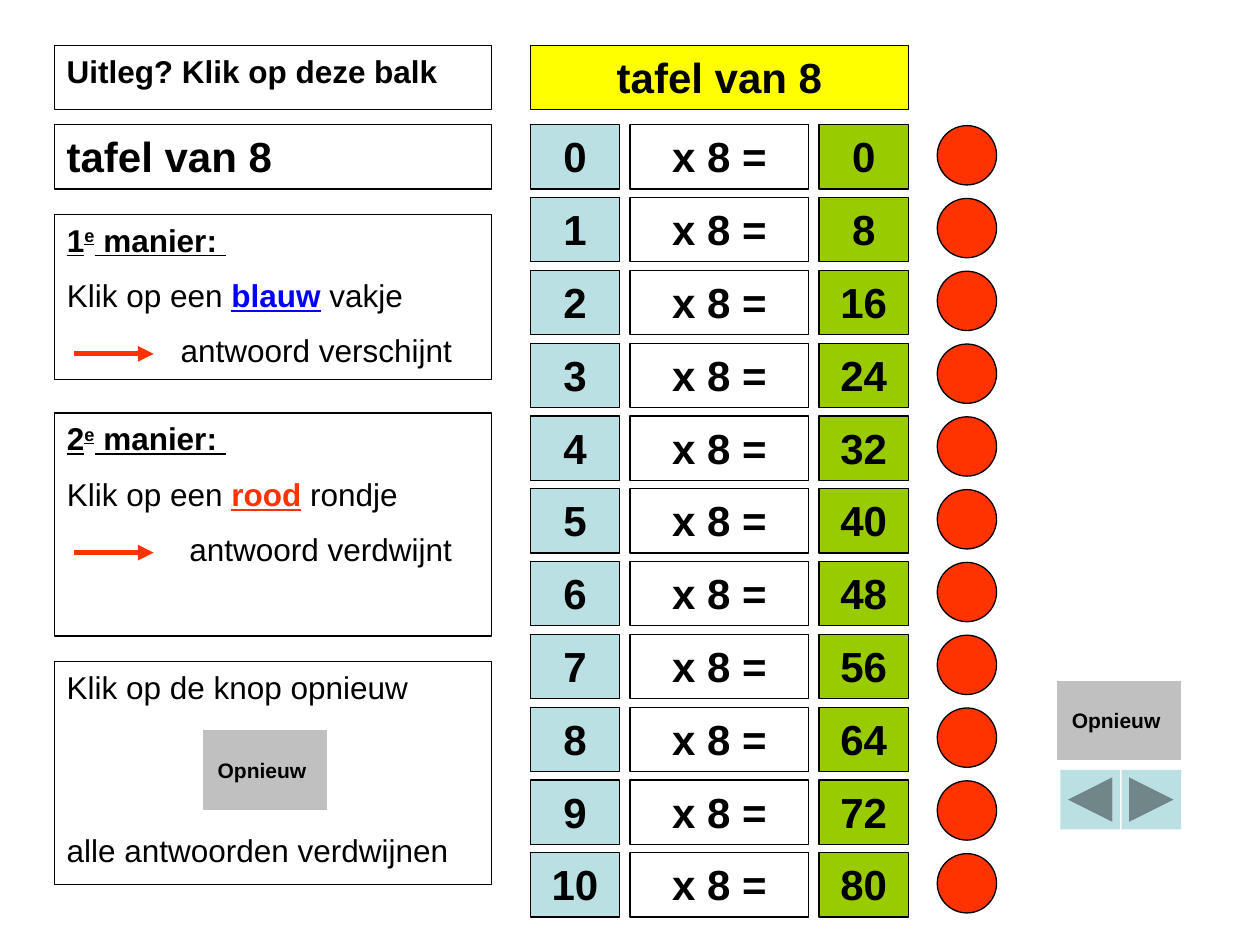
from dataclasses import dataclass

from lxml import etree
from pptx import Presentation
from pptx.dml.color import RGBColor
from pptx.enum import shapes, text
from pptx.oxml.ns import qn
from pptx.util import Pt

KIND = shapes.MSO_SHAPE
ALIGN = text.PP_ALIGN


@dataclass(frozen=True)
class Theme:
    font: str = "Arial"
    black: str = "000000"
    white: str = "FFFFFF"
    yellow: str = "FFFF00"
    pale_blue: str = "BBE0E3"
    green: str = "99CC00"
    red: str = "FF3300"
    link_blue: str = "0000FF"
    grey: str = "C0C0C0"
    large: int = 24
    normal: int = 18
    small: int = 12


THEME = Theme()
TABLE_OF = 8
ROW_TOP, ROW_PITCH, ROW_HEIGHT = 71.3, 41.6, 36.7
HEADER_TOP = 25.9
QUESTION_LEFT, SUM_LEFT, ANSWER_LEFT, DOT_LEFT = 303, 360, 468, 535.6
CELL_WIDTH, SUM_WIDTH, DOT_SIZE = 51.2, 102.2, 33.9
PANEL_LEFT, PANEL_WIDTH = 31, 249.8


def place(shape, left, top, width, height):
    shape.left, shape.top = Pt(left), Pt(top)
    shape.width, shape.height = Pt(width), Pt(height)


def paint(shape, fill=None, outline=True):
    if fill:
        shape.fill.solid()
        shape.fill.fore_color.rgb = RGBColor.from_string(fill)
    else:
        shape.fill.background()
    if outline:
        shape.line.color.rgb = RGBColor.from_string(THEME.black)
        shape.line.width = Pt(0.75)
    else:
        shape.line.fill.background()


def write(shape, *paragraphs, size=THEME.normal, bold=False, align=ALIGN.LEFT,
          anchor=text.MSO_ANCHOR.TOP, wrap=True, gaps=(), indents=()):
    """Each paragraph is a string or a list of (text, run format) pairs."""
    frame = shape.text_frame
    frame.auto_size = text.MSO_AUTO_SIZE.NONE
    frame.word_wrap = wrap
    frame.vertical_anchor = anchor
    for index, content in enumerate(paragraphs):
        paragraph = frame.paragraphs[0] if index == 0 else frame.add_paragraph()
        paragraph.alignment = align
        paragraph.space_before = Pt(gaps[index] if gaps else 0)
        properties = paragraph._p.get_or_add_pPr()
        properties.set("marL", str(Pt(indents[index] if indents else 0)))
        properties.set("indent", "0")
        etree.SubElement(properties, qn("a:buNone"))
        for words, style in [(content, {})] if isinstance(content, str) else content:
            run = paragraph.add_run()
            run.text = words
            run.font.name = THEME.font
            run.font.size = Pt(size)
            run.font.bold = style.get("bold", bold)
            run.font.underline = style.get("underline", False)
            run.font.color.rgb = RGBColor.from_string(style.get("color", THEME.black))
            if style.get("raised"):
                run._r.get_or_add_rPr().set("baseline", "30000")


def add_shape(slide, kind, left, top, width, height, fill=None, outline=True):
    shape = slide.shapes.add_shape(kind, Pt(left), Pt(top), Pt(width), Pt(height))
    shape.shadow.inherit = False
    paint(shape, fill, outline)
    return shape


def add_cell(slide, words, left, top, width, fill):
    cell = add_shape(slide, KIND.RECTANGLE, left, top, width, ROW_HEIGHT, fill)
    write(cell, words, size=THEME.large, bold=True, align=ALIGN.CENTER)


def add_bar(slide, words, top, size):
    bar = add_shape(slide, KIND.RECTANGLE, PANEL_LEFT, top, PANEL_WIDTH, ROW_HEIGHT)
    write(bar, words, size=size, bold=True)


def add_arrow(slide, top):
    arrow = slide.shapes.add_connector(shapes.MSO_CONNECTOR.STRAIGHT,
                                       Pt(42.5), Pt(top), Pt(87.8), Pt(top))
    arrow.line.color.rgb = RGBColor.from_string(THEME.red)
    arrow.line.width = Pt(3)
    etree.SubElement(arrow.line._get_or_add_ln(), qn("a:tailEnd"), type="triangle")
    etree.SubElement(arrow._element.spPr, qn("a:effectLst"))


def add_method(slide, panel, number, top, height, colour_word, target, result, indent):
    """Explain one way of using the table, with an arrow to its result."""
    heading = {"bold": True, "underline": True}
    colour_name, colour = colour_word
    place(panel, PANEL_LEFT, top, PANEL_WIDTH, height)
    paint(panel)
    write(panel,
          [(number, heading), ("e", {**heading, "raised": True}), (" manier: ", heading)],
          [("Klik op een ", {}), (colour_name, {**heading, "color": colour}), (target, {})],
          result, gaps=(0, 10, 10), indents=(0, 0, indent))
    add_arrow(slide, top + 79.8)


def add_reset_button(slide, left, top):
    button = add_shape(slide, KIND.ACTION_BUTTON_CUSTOM, left, top, 70.8, 45.4,
                       THEME.grey, outline=False)
    write(button, "Opnieuw ", size=THEME.small, bold=True, align=ALIGN.CENTER,
          anchor=text.MSO_ANCHOR.MIDDLE, wrap=False)


def add_reset_panel(slide):
    panel = add_shape(slide, KIND.RECTANGLE, PANEL_LEFT, 378, PANEL_WIDTH, 127.4)
    write(panel, "Klik op de knop opnieuw", "alle antwoorden verdwijnen", gaps=(0, 71.5))
    add_reset_button(slide, 116, 417.4)


def add_times_table(slide):
    for factor in range(11):
        top = ROW_TOP + factor * ROW_PITCH
        add_cell(slide, str(factor), QUESTION_LEFT, top, CELL_WIDTH, THEME.pale_blue)
        add_cell(slide, f"x {TABLE_OF} =", SUM_LEFT, top, SUM_WIDTH, THEME.white)
        add_cell(slide, str(factor * TABLE_OF), ANSWER_LEFT, top, CELL_WIDTH, THEME.green)
        add_shape(slide, KIND.OVAL, DOT_LEFT, top + 0.5, DOT_SIZE, DOT_SIZE, THEME.red)


def add_navigation(slide):
    add_reset_button(slide, 604.1, 389)
    for left, kind in ((606, KIND.ACTION_BUTTON_BACK_OR_PREVIOUS),
                       (641, KIND.ACTION_BUTTON_FORWARD_OR_NEXT)):
        add_shape(slide, kind, left, 440, DOT_SIZE, DOT_SIZE, THEME.pale_blue, outline=False)


def main():
    deck = Presentation()
    deck.slide_width, deck.slide_height = Pt(720), Pt(540)
    slide = deck.slides.add_slide(deck.slide_layouts.get_by_name("Two Content"))
    title, first_method, second_method = list(slide.placeholders)[:3]

    table_name = f"tafel van {TABLE_OF}"
    place(title, QUESTION_LEFT, HEADER_TOP,
          ANSWER_LEFT + CELL_WIDTH - QUESTION_LEFT, ROW_HEIGHT)
    paint(title, THEME.yellow)
    write(title, table_name, size=THEME.large, bold=True, align=ALIGN.CENTER)

    add_bar(slide, "Uitleg? Klik op deze balk", HEADER_TOP, THEME.normal)
    add_bar(slide, table_name, ROW_TOP, THEME.large)
    add_method(slide, first_method, "1", 122.4, 94.5, ("blauw", THEME.link_blue),
               " vakje", "antwoord verschijnt", 65)
    add_method(slide, second_method, "2", 236, 127.4, ("rood", THEME.red),
               " rondje", "antwoord verdwijnt", 70)
    add_reset_panel(slide)
    add_times_table(slide)
    add_navigation(slide)
    deck.save("out.pptx")


if __name__ == "__main__":
    main()
